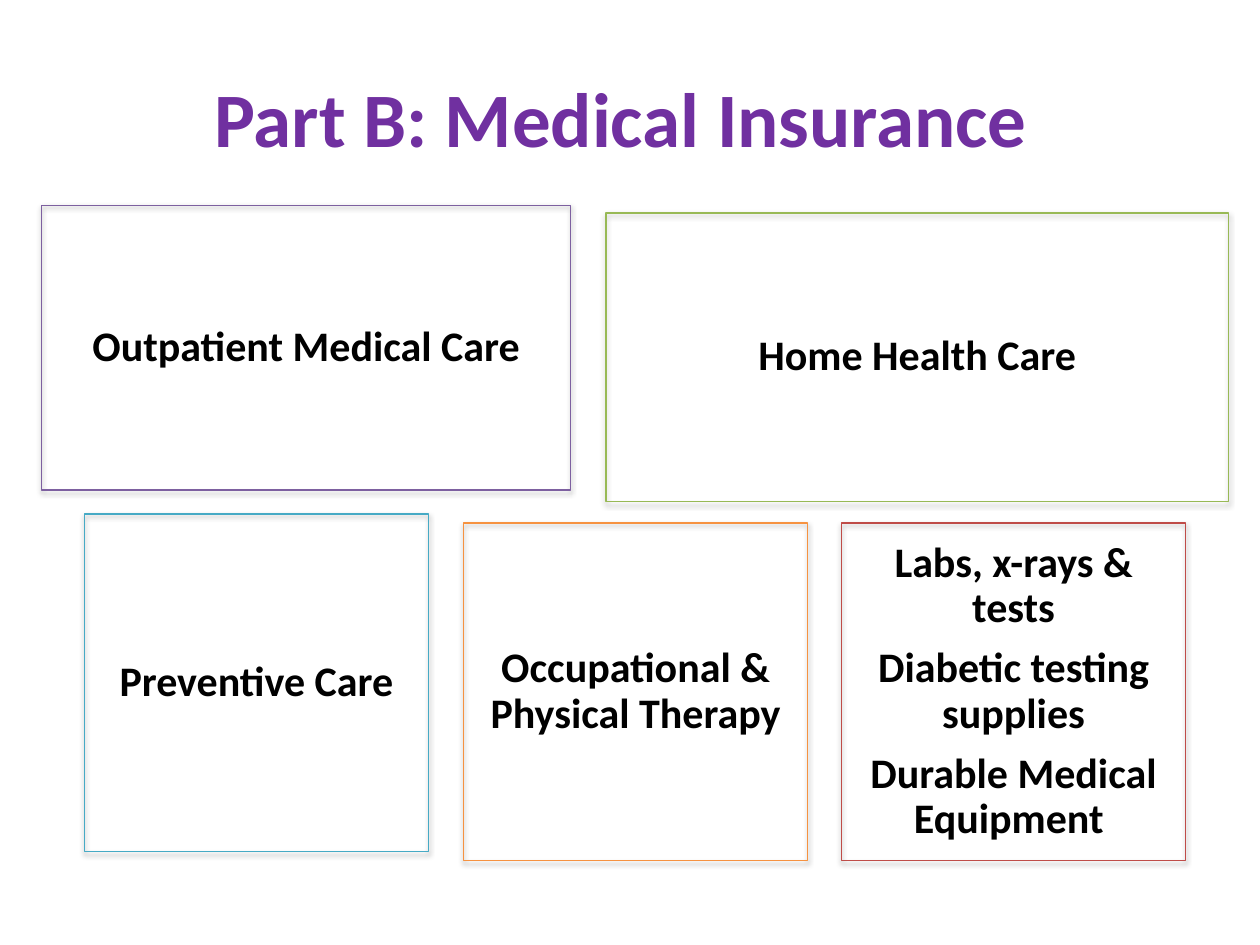
from lxml.etree import SubElement
from pptx import Presentation
from pptx.dml.color import RGBColor
from pptx.enum.shapes import MSO_SHAPE
from pptx.enum.text import MSO_ANCHOR, PP_ALIGN
from pptx.oxml.ns import qn
from pptx.util import Inches, Pt

TITLE_PURPLE = RGBColor(0x70, 0x30, 0xA0)
BLACK = RGBColor(0x00, 0x00, 0x00)
PURPLE = RGBColor(0x7D, 0x60, 0xA0)
GREEN = RGBColor(0x98, 0xB9, 0x55)
TEAL = RGBColor(0x46, 0xAA, 0xC5)
ORANGE = RGBColor(0xF6, 0x92, 0x40)
RED = RGBColor(0xBF, 0x4C, 0x48)

# Each card: left, top, width, height in inches, outline colour, paragraphs
SMALL_WIDTH, SMALL_HEIGHT = 2.73, 2.68
CARDS = [
    (0.33, 1.63, 4.2, 2.26, PURPLE, ["Outpatient Medical Care"]),
    (4.81, 1.69, 4.94, 2.29, GREEN, ["Home Health Care"]),
    (0.67, 4.08, SMALL_WIDTH, SMALL_HEIGHT, TEAL, ["Preventive Care"]),
    (3.68, 4.15, SMALL_WIDTH, SMALL_HEIGHT, ORANGE,
     ["Occupational & Physical Therapy"]),
    (6.68, 4.15, SMALL_WIDTH, SMALL_HEIGHT, RED,
     ["Labs, x-rays & tests", "Diabetic testing supplies",
      "Durable Medical Equipment "]),
]


def add_text(slide, box, lines, size, color, margin=None):
    """Place centred bold paragraphs in the middle of the box."""
    text_frame = slide.shapes.add_textbox(*box).text_frame
    text_frame.word_wrap = True
    text_frame.vertical_anchor = MSO_ANCHOR.MIDDLE
    if margin is not None:
        text_frame.margin_left = text_frame.margin_right = margin
        text_frame.margin_top = text_frame.margin_bottom = margin
    for index, line in enumerate(lines):
        paragraph = text_frame.add_paragraph() if index else text_frame.paragraphs[0]
        paragraph.alignment = PP_ALIGN.CENTER
        run = paragraph.add_run()
        run.text = line
        run.font.name = "Calibri"
        run.font.size = Pt(size)
        run.font.bold = True
        run.font.color.rgb = color
    return text_frame


def add_soft_shadow(shape):
    """Give the shape a faint shadow straight below it."""
    shape.shadow.inherit = False
    effects = shape._element.spPr.find(qn("a:effectLst"))
    shadow = SubElement(effects, qn("a:outerShdw"), blurRad=str(Pt(3.1)),
                        dist=str(Pt(1.6)), dir="5400000", rotWithShape="0")
    color = SubElement(shadow, qn("a:srgbClr"), val="000000")
    SubElement(color, qn("a:alpha"), val="38000")


def add_title(slide, box):
    add_text(slide, box, ["Part B: Medical Insurance "], 44, TITLE_PURPLE)


def add_card(slide, box, color, lines):
    # Outline
    frame = slide.shapes.add_shape(MSO_SHAPE.RECTANGLE, *box)
    frame.fill.background()
    frame.line.color.rgb = color
    frame.line.width = Pt(0.75)
    add_soft_shadow(frame)

    # Label, kept apart from the outline so that it casts no shadow
    text_frame = add_text(slide, box, lines, 24, BLACK, Inches(0.1))
    for paragraph in text_frame.paragraphs:
        paragraph.line_spacing = 0.9
        paragraph.space_after = Pt(8.4)


def main():
    presentation = Presentation()
    presentation.slide_width = Inches(10)
    presentation.slide_height = Inches(7.5)
    slide = presentation.slides.add_slide(presentation.slide_layouts[6])

    add_title(slide, (Inches(0), Inches(0.3), Inches(10), Inches(1.25)))
    for *lengths, color, lines in CARDS:
        add_card(slide, [Inches(length) for length in lengths], color, lines)

    presentation.save("out.pptx")


if __name__ == "__main__":
    main()
